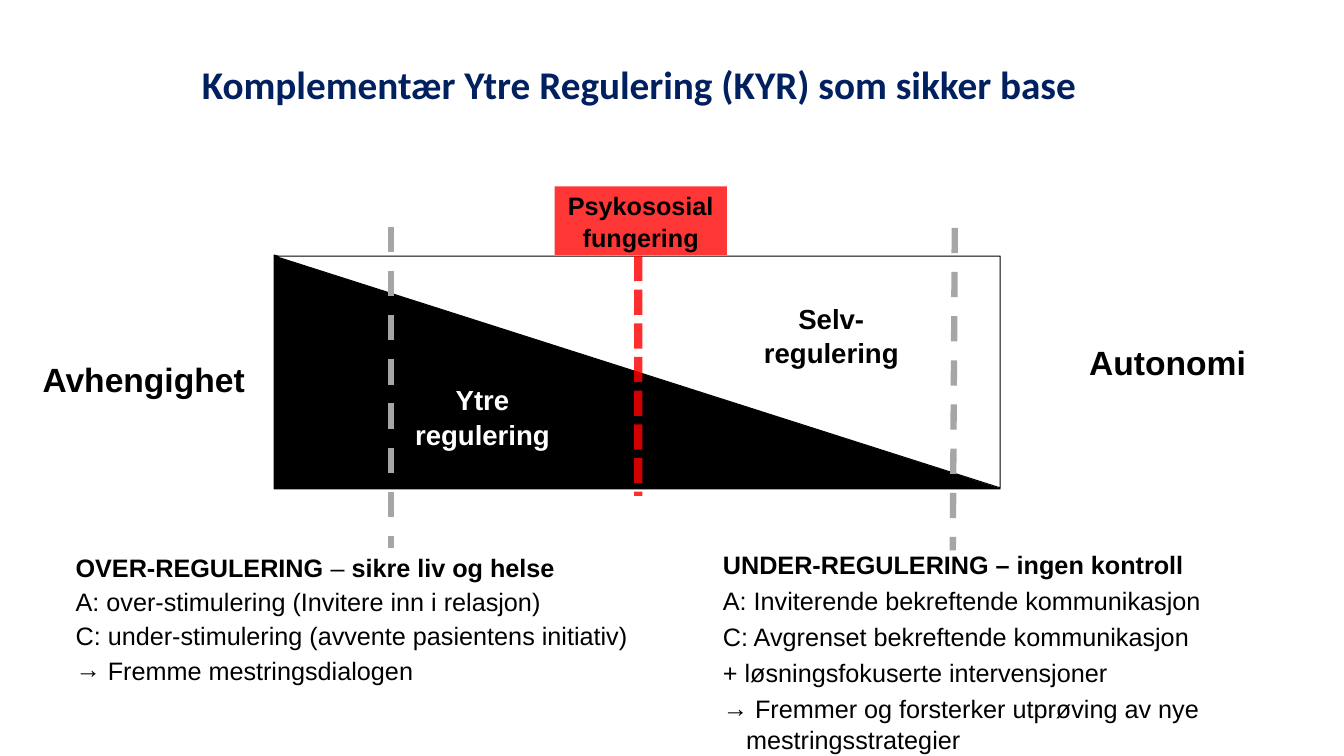
from dataclasses import dataclass

from lxml.etree import SubElement
from pptx import Presentation
from pptx.dml.color import RGBColor
from pptx.enum.dml import MSO_LINE
from pptx.enum.shapes import MSO_CONNECTOR, MSO_SHAPE
from pptx.enum.text import MSO_ANCHOR, MSO_AUTO_SIZE, PP_ALIGN
from pptx.oxml.ns import qn
from pptx.util import Inches, Pt


@dataclass(frozen=True)
class Theme:
    black: str = "000000"
    white: str = "FFFFFF"
    navy: str = "002060"
    red: str = "FF0000"
    grey: str = "A6A6A6"
    title_font: str = "Calibri"
    body_font: str = "Arial"
    title_size: float = 28
    end_size: float = 24
    label_size: float = 19.7
    body_size: float = 18
    leading: float = 1.04


THEME = Theme()
ARROW = "→"

TITLE = "Komplementær Ytre Regulering (KYR) som sikker base"
TITLE_AREA = (1.85, 0.53, 8.97, 1.14)

# Area, rotation, fill
TRIANGLES = [
    ((2.72, 2.53, 7.2, 2.32), 0, THEME.black),
    ((2.72, 2.54, 7.2, 2.3), 180, THEME.white),
]

# Text, area, size, colour
LABELS = [
    ("Ytre regulering", (3.89, 3.75, 1.79, 0.74), THEME.label_size, THEME.white),
    ("Selv-regulering", (7.38, 2.94, 1.73, 0.74), THEME.label_size, THEME.black),
    ("Avhengighet", (0.3, 3.5, 2.25, 0.48), THEME.end_size, THEME.black),
    ("Autonomi", (10.22, 3.34, 2.72, 0.48), THEME.end_size, THEME.black),
]

# Start, end, colour, width, dash, opacity in percent
DIVIDERS = [
    ((6.33, 2.54), (6.33, 4.92), THEME.red, 6, MSO_LINE.SQUARE_DOT, 81),
    ((9.47, 2.26), (9.45, 5.46), THEME.grey, 4.5, MSO_LINE.DASH, 100),
    ((3.88, 2.25), (3.88, 5.44), THEME.grey, 4.5, MSO_LINE.DASH, 100),
]

TAG = ("Psykososial fungering", (5.5, 1.85, 1.71, 0.68), 79)

# Area, space before, heading as (text, bold) pairs, lines as (bullet, text) pairs
REGULATION_LISTS = [
    (
        (0.67, 5.43, 5.76, 1.7),
        1.9,
        [("OVER-REGULERING ", True), ("– ", False), ("sikre liv og helse", True)],
        [
            (None, "A: over-stimulering (Invitere inn i relasjon)"),
            (None, "C: under-stimulering (avvente pasientens initiativ)"),
            (ARROW, " Fremme mestringsdialogen"),
        ],
    ),
    (
        (7.09, 5.4, 6.24, 2.06),
        3.2,
        [("UNDER-REGULERING – ingen kontroll", True)],
        [
            (None, "A: Inviterende bekreftende kommunikasjon"),
            (None, "C: Avgrenset bekreftende kommunikasjon"),
            (None, "+ løsningsfokuserte intervensjoner"),
            (ARROW, " Fremmer og forsterker utprøving av nye mestringsstrategier"),
        ],
    ),
]


def inches(values):
    return [Inches(value) for value in values]


def place(shape, area):
    shape.left, shape.top, shape.width, shape.height = inches(area)


def prepare_frame(frame, anchor=MSO_ANCHOR.TOP, side=0.08, edge=0.04):
    frame.word_wrap = True
    frame.auto_size = MSO_AUTO_SIZE.NONE
    frame.vertical_anchor = anchor
    frame.margin_left = frame.margin_right = Inches(side)
    frame.margin_top = frame.margin_bottom = Inches(edge)


def style_span(span, size, color, bold=True, font=THEME.body_font):
    span.font.name = font
    span.font.size = Pt(size)
    span.font.bold = bold
    span.font.color.rgb = RGBColor.from_string(color)


def set_opacity(owner, percent):
    """Add opacity to the solid fill colour held inside the given XML element."""
    color = owner.find(qn("a:solidFill")).find(qn("a:srgbClr"))
    SubElement(color, qn("a:alpha"), val=str(percent * 1000))


def set_bullet(para, bullet):
    """Give the paragraph a hanging bullet, or neither bullet nor indent."""
    properties = para._p.get_or_add_pPr()
    margin = Inches(0.23) if bullet else 0
    properties.set("marL", str(margin))
    properties.set("indent", str(-margin))
    if bullet:
        SubElement(properties, qn("a:buChar"), char=bullet)
    else:
        SubElement(properties, qn("a:buNone"))


def write_label(shape, text, size, color, anchor=MSO_ANCHOR.TOP):
    frame = shape.text_frame
    prepare_frame(frame, anchor)
    frame.text = text
    para = frame.paragraphs[0]
    para.alignment = PP_ALIGN.CENTER
    para.line_spacing = THEME.leading
    style_span(para.runs[0], size, color)


def add_filled(page, kind, area, color):
    shape = page.shapes.add_shape(kind, *inches(area))
    shape.shadow.inherit = False
    shape.fill.solid()
    shape.fill.fore_color.rgb = RGBColor.from_string(color)
    return shape


def write_title(title):
    place(title, TITLE_AREA)
    frame = title.text_frame
    prepare_frame(frame, side=0.14, edge=0.07)
    frame.text = TITLE
    para = frame.paragraphs[0]
    para.alignment = PP_ALIGN.CENTER
    style_span(para.runs[0], THEME.title_size, THEME.navy, font=THEME.title_font)


def write_list(body, area, space_before, heading, lines):
    place(body, area)
    frame = body.text_frame
    prepare_frame(frame)
    rows = [(None, heading)] + [(bullet, [(text, False)]) for bullet, text in lines]
    for index, (bullet, spans) in enumerate(rows):
        para = frame.add_paragraph() if index else frame.paragraphs[0]
        para.alignment = PP_ALIGN.LEFT
        para.space_before = Pt(space_before)
        para.line_spacing = THEME.leading
        set_bullet(para, bullet)
        for text, bold in spans:
            span = para.add_run()
            span.text = text
            style_span(span, THEME.body_size, THEME.black, bold)


def add_divider(page, start, end, color, width, dash, opacity):
    divider = page.shapes.add_connector(MSO_CONNECTOR.STRAIGHT, *inches(start + end))
    divider.line.color.rgb = RGBColor.from_string(color)
    divider.line.width = Pt(width)
    divider.line.dash_style = dash
    properties = divider._element.spPr
    if opacity < 100:
        set_opacity(properties.find(qn("a:ln")), opacity)
    SubElement(properties, qn("a:effectLst"))


def main():
    deck = Presentation()
    deck.slide_width, deck.slide_height = inches((13.33, 7.5))
    page = deck.slides.add_slide(deck.slide_layouts.get_by_name("Two Content"))
    write_title(page.shapes.title)
    for index, content in enumerate(REGULATION_LISTS, start=1):
        write_list(page.placeholders[index], *content)

    for area, rotation, color in TRIANGLES:
        triangle = add_filled(page, MSO_SHAPE.RIGHT_TRIANGLE, area, color)
        triangle.rotation = rotation
        triangle.line.color.rgb = RGBColor.from_string(THEME.black)
        triangle.line.width = Pt(0.75)
    for text, area, size, color in LABELS:
        write_label(page.shapes.add_textbox(*inches(area)), text, size, color)
    for divider in DIVIDERS:
        add_divider(page, *divider)

    text, area, opacity = TAG
    tag = add_filled(page, MSO_SHAPE.RECTANGLE, area, THEME.red)
    set_opacity(tag._element.spPr, opacity)
    tag.line.fill.background()
    write_label(tag, text, THEME.body_size, THEME.black, MSO_ANCHOR.MIDDLE)
    deck.save("out.pptx")


if __name__ == "__main__":
    main()
